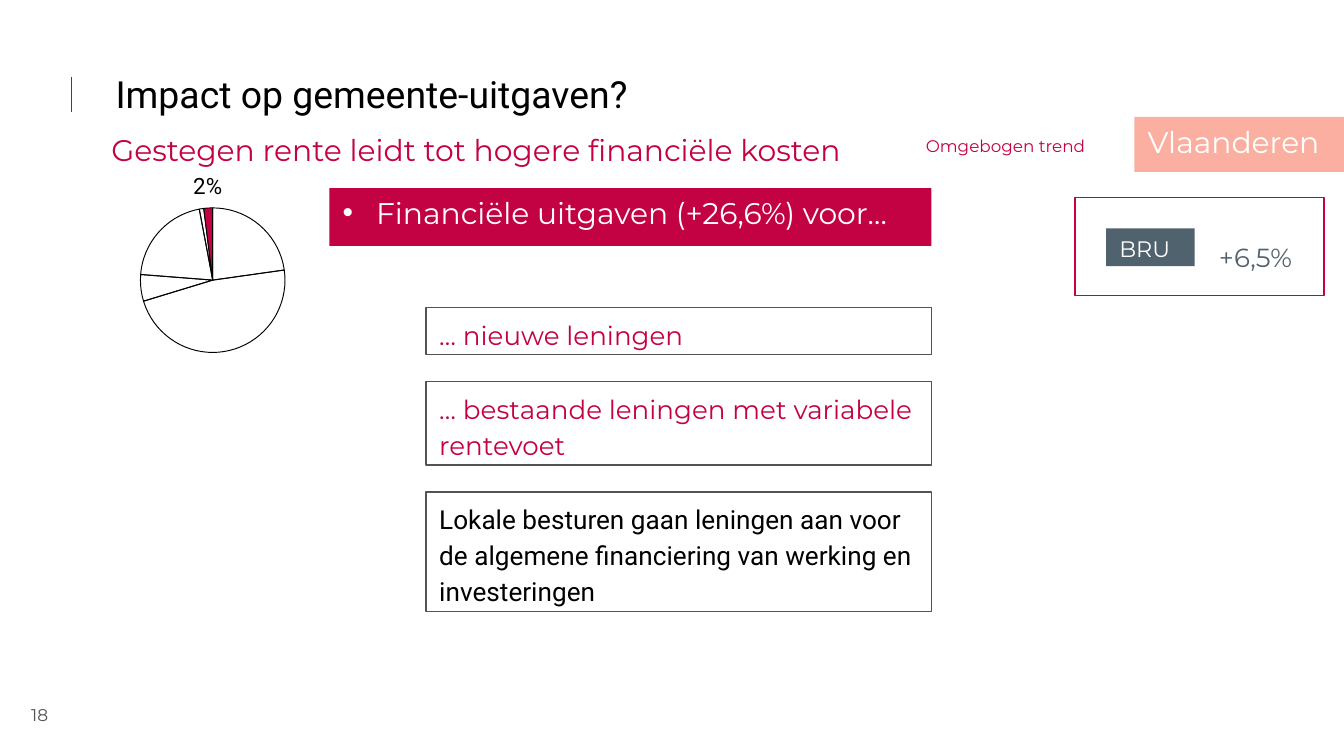
from lxml import etree
from pptx import Presentation
from pptx.chart.data import CategoryChartData
from pptx.dml.color import RGBColor
from pptx.enum.chart import XL_CHART_TYPE, XL_LABEL_POSITION
from pptx.enum.shapes import MSO_CONNECTOR, MSO_SHAPE
from pptx.enum.text import MSO_ANCHOR, MSO_AUTO_SIZE, PP_ALIGN
from pptx.oxml import parse_xml
from pptx.oxml.ns import nsdecls, qn
from pptx.util import Inches, Pt

PIE = XL_CHART_TYPE.PIE
OUTSIDE = XL_LABEL_POSITION.OUTSIDE_END
STRAIGHT = MSO_CONNECTOR.STRAIGHT
RECTANGLE = MSO_SHAPE.RECTANGLE
TOP, MIDDLE = MSO_ANCHOR.TOP, MSO_ANCHOR.MIDDLE
LEFT, CENTER = PP_ALIGN.LEFT, PP_ALIGN.CENTER
NO_AUTOFIT = MSO_AUTO_SIZE.NONE

CRIMSON, SLATE, GREY = "C30144", "51626F", "535353"
SALMON, BLACK, WHITE = "FBAFA0", "000000", "FFFFFF"
MONTSERRAT, ROBOTO = "Montserrat", "Roboto"


def rgb(value):
    return RGBColor.from_string(value)


def style_font(font, size, color, name):
    font.size = Pt(size)
    font.color.rgb = rgb(color)
    font.name = name


def write(shape, text, size=14, color=CRIMSON, font=MONTSERRAT, align=LEFT,
          anchor=TOP, spacing=None, after=None, bullet=None, inset=None):
    frame = shape.text_frame
    frame.word_wrap = True
    frame.auto_size = NO_AUTOFIT
    frame.vertical_anchor = anchor
    if inset is not None:
        frame.margin_left = frame.margin_right = Inches(inset)
        frame.margin_top = frame.margin_bottom = Inches(inset)
    paragraph = frame.paragraphs[0]
    if bullet:
        properties = paragraph._p.get_or_add_pPr()
        properties.set("marL", str(Inches(0.25)))
        properties.set("indent", str(Inches(-0.25)))
        etree.SubElement(properties, qn("a:buFont")).set("typeface", "Arial")
        etree.SubElement(properties, qn("a:buChar")).set("char", bullet)
    paragraph.alignment = align
    if spacing:
        paragraph.line_spacing = spacing
    if after:
        paragraph.space_after = Pt(after)
    run = paragraph.add_run()
    run.text = text
    style_font(run.font, size, color, font)


class SlideBuilder:
    def __init__(self, slide):
        self.slide = slide
        self.shapes = slide.shapes

    def title(self, text, left, top, width, height):
        shape = self.shapes.title
        shape.left, shape.top = Inches(left), Inches(top)
        shape.width, shape.height = Inches(width), Inches(height)
        write(shape, text, size=20, color=BLACK, font=ROBOTO, anchor=MIDDLE)

    def text(self, text, left, top, width, height, **style):
        shape = self.shapes.add_textbox(Inches(left), Inches(top),
                                        Inches(width), Inches(height))
        write(shape, text, **style)

    def box(self, left, top, width, height, text=None, fill=None, line=None,
            weight=0.75, **style):
        shape = self.shapes.add_shape(RECTANGLE, Inches(left), Inches(top),
                                      Inches(width), Inches(height))
        shape.shadow.inherit = False
        if fill:
            shape.fill.solid()
            shape.fill.fore_color.rgb = rgb(fill)
        else:
            shape.fill.background()
        if line:
            shape.line.color.rgb = rgb(line)
            shape.line.width = Pt(weight)
        else:
            shape.line.fill.background()
        if text:
            write(shape, text, **style)

    def line(self, left, top, right, bottom, color, weight):
        connector = self.shapes.add_connector(STRAIGHT, Inches(left), Inches(top),
                                              Inches(right), Inches(bottom))
        connector.line.color.rgb = rgb(color)
        connector.line.width = Pt(weight)
        etree.SubElement(connector._element.spPr, qn("a:effectLst"))

    def pie(self, values, highlight, left, top, width, height, layout):
        data = CategoryChartData()
        data.categories = [str(number + 1) for number in range(len(values))]
        data.add_series("Series 1", values)
        chart = self.shapes.add_chart(PIE, Inches(left), Inches(top), Inches(width),
                                      Inches(height), data).chart
        chart.has_title = False
        chart.has_legend = False
        style_font(chart.font, 10, SLATE, MONTSERRAT)
        series = chart.plots[0].series[0]
        for index in range(len(values)):
            point_format = series.points[index].format
            point_format.line.color.rgb = rgb(BLACK)
            point_format.line.width = Pt(0.5)
            if index == highlight:
                point_format.fill.solid()
                point_format.fill.fore_color.rgb = rgb(CRIMSON)
            else:
                point_format.fill.background()
        series.data_labels.show_value = False
        label = series.points[highlight].data_label
        style_font(label.font, 12, BLACK, ROBOTO)
        label.position = OUTSIDE
        label_xml = series._element.find(".//" + qn("c:dLbl"))
        label_xml.find(qn("c:showVal")).set("val", "0")
        label_xml.find(qn("c:showPercent")).set("val", "1")
        self.place_plot(chart, layout)

    def place_plot(self, chart, layout):
        plot_area = chart._chartSpace.chart.plotArea
        for old in plot_area.findall(qn("c:layout")):
            plot_area.remove(old)
        sizes = "".join(f'<c:{key} val="{value}"/>' for key, value in layout.items())
        plot_area.insert(0, parse_xml(
            f'<c:layout {nsdecls("c")}><c:manualLayout>'
            '<c:layoutTarget val="inner"/><c:xMode val="edge"/><c:yMode val="edge"/>'
            f'{sizes}</c:manualLayout></c:layout>'))


def main():
    presentation = Presentation()
    presentation.slide_width = Inches(10)
    presentation.slide_height = Inches(10 * 9 / 16)
    builder = SlideBuilder(presentation.slides.add_slide(presentation.slide_layouts[5]))

    builder.text("18", 0.12, 5.2, 0.35, 0.23, size=9.1, color=GREY,
                 align=CENTER, inset=0.04)
    builder.line(0.53, 0.57, 0.53, 0.83, "C30045", 0.75)
    builder.box(2.45, 1.4, 4.48, 0.43, "Financiële uitgaven (+26,6%) voor…",
                fill="C30243", size=16, color=WHITE, bullet="•")
    builder.pie((23, 48, 6, 21, 1, 2), 5, 0.45, 1.16, 2.29, 1.61,
                {"x": 0.26, "y": 0.24, "w": 0.47, "h": 0.67})
    builder.text("Gestegen rente leidt tot hogere financiële kosten",
                 0.73, 0.8, 7.53, 0.47, size=16, spacing=1.5)
    builder.title("Impact op gemeente-uitgaven?", 0.76, 0.53, 8.7, 0.34)

    loan_boxes = (
        (2.29, 0.35, "… nieuwe leningen", CRIMSON, MONTSERRAT),
        (2.84, 0.62, "… bestaande leningen met variabele rentevoet",
         CRIMSON, MONTSERRAT),
        (3.66, 0.89, "Lokale besturen gaan leningen aan voor de algemene "
         "financiering van werking en investeringen", BLACK, ROBOTO),
    )
    for top, height, text, color, font in loan_boxes:
        builder.box(3.17, top, 3.76, height, text, line=GREY, color=color,
                    font=font, spacing=1.15, after=10)

    builder.text("Omgebogen trend", 6.79, 0.96, 2.36, 0.25, size=9)
    builder.box(8.44, 0.87, 1.56, 0.41, "Vlaanderen", fill=SALMON, size=16, color=WHITE)
    builder.box(8.23, 1.7, 0.66, 0.28, "BRU", fill=SLATE, size=12, color=WHITE)
    builder.text("+6,5%", 8.97, 1.63, 0.88, 0.28, color=SLATE, spacing=1.5)
    builder.box(8, 1.47, 1.85, 0.73, line=CRIMSON, weight=1)

    presentation.save("out.pptx")


if __name__ == "__main__":
    main()
